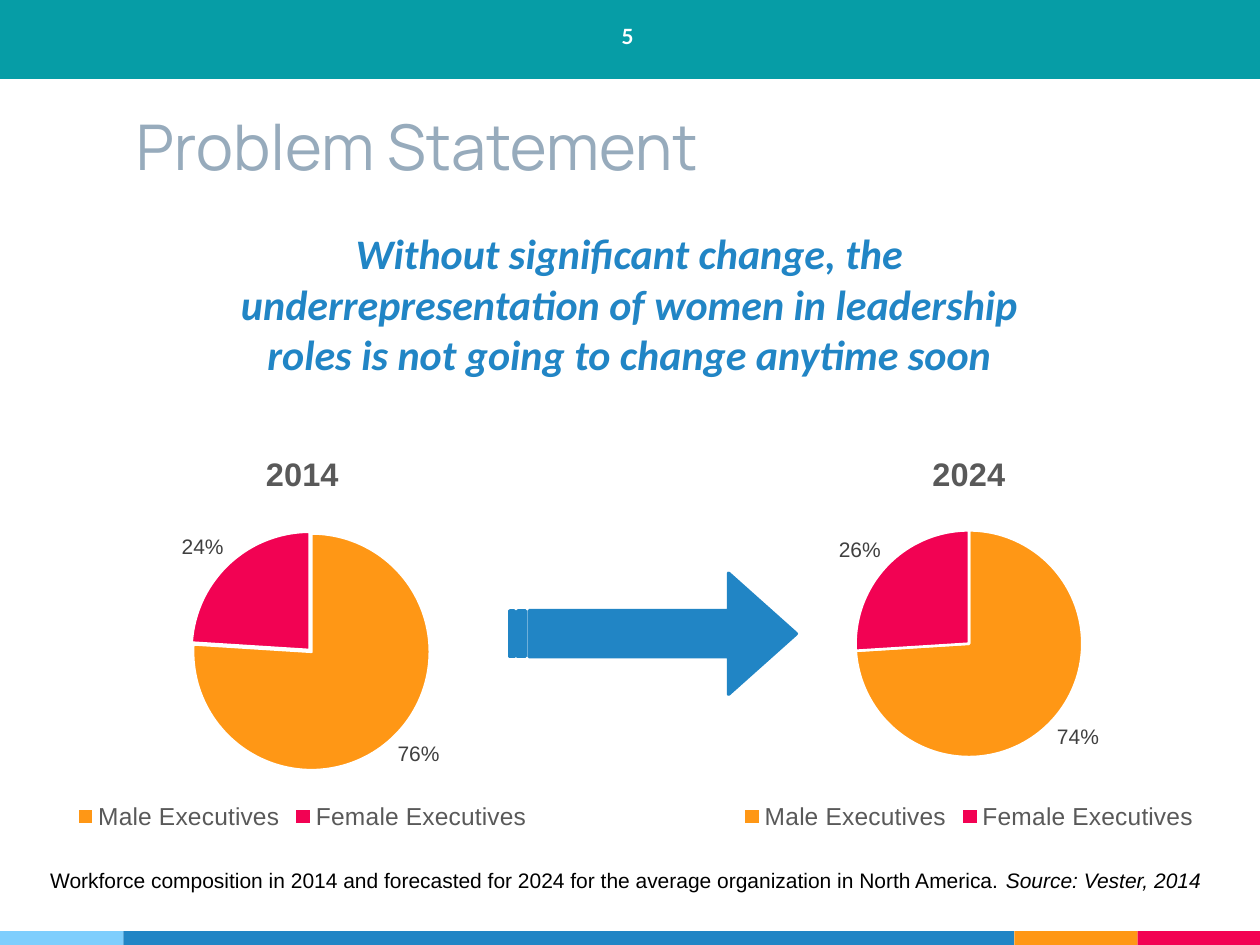
"""Build the problem statement slide with two pie charts."""
from lxml.etree import SubElement as Sub
from pptx import Presentation
from pptx.chart.data import CategoryChartData as Data
from pptx.dml.color import RGBColor
from pptx.enum.chart import XL_CHART_TYPE as Kind, XL_LABEL_POSITION as Spot, XL_LEGEND_POSITION as Side
from pptx.enum.shapes import MSO_SHAPE as Form
from pptx.enum.text import MSO_ANCHOR as Anchor, PP_ALIGN as Align
from pptx.oxml.ns import qn
from pptx.util import Inches, Pt

TEAL = RGBColor(0x06, 0x9D, 0xA6)
BLUE = RGBColor(0x21, 0x85, 0xC5)
SKY = RGBColor(0x7E, 0xCE, 0xFD)
ORANGE = RGBColor(0xFF, 0x97, 0x15)
PINK = RGBColor(0xF2, 0x02, 0x53)
SLATE = RGBColor(0x97, 0xAB, 0xBC)
GRAY = RGBColor(0x59, 0x59, 0x59)
DARK = RGBColor(0x40, 0x40, 0x40)
BLACK = RGBColor(0, 0, 0)
WHITE = RGBColor(0xFF, 0xFF, 0xFF)


class Deck:
    """Hold the slide and its chart style."""

    font = "Arial"
    groups = ("Male Executives", "Female Executives")
    hues = (ORANGE, PINK)

    def __init__(self, prs):
        """Add a blank slide."""
        self.slide = prs.slides.add_slide(prs.slide_layouts[6])

    def style(self, font, size, color, name=None, bold=False, italic=False):
        """Set the look of a font."""
        font.name = name or self.font
        font.size = Pt(size)
        font.color.rgb = color
        font.bold = bold
        font.italic = italic

    def shape(self, form, box, color, line=0):
        """Add a filled shape."""
        item = self.slide.shapes.add_shape(form, *map(Inches, box))
        item.shadow.inherit = False
        item.fill.solid()
        item.fill.fore_color.rgb = color
        if line:
            item.line.color.rgb = color
            item.line.width = Pt(line)
        else:
            item.line.fill.background()
        return item

    def text(self, box, words, size, color, name=None, bold=False, italic=False, align=Align.LEFT):
        """Add a wrapped text box."""
        frame = self.slide.shapes.add_textbox(*map(Inches, box)).text_frame
        frame.word_wrap = True
        frame.text = words
        par = frame.paragraphs[0]
        par.alignment = align
        self.style(par.runs[0].font, size, color, name, bold, italic)
        return frame

    def pie(self, box, title, vals, plot, burst=0):
        """Add a pie chart with a fixed plot area."""
        data = Data(number_format="0%")
        data.categories = self.groups
        data.add_series("Series 1", vals)
        chart = self.slide.shapes.add_chart(Kind.PIE, *map(Inches, box), data).chart
        self.style(chart.font, 10, BLACK)
        chart.has_title = True
        head = chart.chart_title.text_frame
        head.text = title
        self.style(head.paragraphs[0].runs[0].font, 18.6, GRAY, bold=True)
        chart.has_legend = True
        chart.legend.position = Side.BOTTOM
        chart.legend.include_in_layout = False
        self.style(chart.legend.font, 14, GRAY)
        pie = chart.plots[0]
        pie.vary_by_categories = True
        pie.has_data_labels = True
        tags = pie.data_labels
        tags.show_value = True
        tags.show_percentage = False
        tags.number_format = "0%"
        tags.number_format_is_linked = False
        tags.position = Spot.OUTSIDE_END
        self.style(tags.font, 12, DARK)
        for i, hue in enumerate(self.hues):
            look = pie.series[0].points[i].format
            look.fill.solid()
            look.fill.fore_color.rgb = hue
            look.line.color.rgb = WHITE
            look.line.width = Pt(1.5)
        if burst:
            point = pie.series[0]._element.findall(qn("c:dPt"))[1]
            mark = point.makeelement(qn("c:explosion"), {"val": str(burst)})
            point.find(qn("c:spPr")).addprevious(mark)
        self.place(chart, plot)

    def place(self, chart, plot):
        """Fix the inner plot area as fractions of the chart."""
        area = chart._chartSpace.chart.plotArea
        for old in area.findall(qn("c:layout")):
            area.remove(old)
        lay = area.makeelement(qn("c:layout"), {})
        area.insert(0, lay)
        man = Sub(lay, qn("c:manualLayout"))
        rules = [("layoutTarget", "inner"), ("xMode", "edge"), ("yMode", "edge")]
        for tag, val in rules + list(zip("xywh", plot)):
            Sub(man, qn("c:" + tag), val=str(val))


def main():
    """Draw and save the slide."""
    prs = Presentation()
    prs.slide_width, prs.slide_height = Inches(10), Inches(7.5)
    deck = Deck(prs)

    left = 0
    for wide, hue in ((0.98, SKY), (7.07, BLUE), (0.98, ORANGE), (0.97, PINK)):
        deck.shape(Form.RECTANGLE, (left, 7.39, wide, 0.11), hue)
        left += wide

    title = deck.text((0.98, 0.3, 8.36, 1.25), "Problem Statement", 36, SLATE, "Manrope")
    title.vertical_anchor = Anchor.BOTTOM
    title.margin_left = title.margin_right = Inches(0.1)
    title.margin_top = title.margin_bottom = Inches(0.1)

    deck.pie((-0.01, 3.43, 4.82, 3.2), "2014", (0.76, 0.24), (0.32, 0.25, 0.39, 0.59), 2)
    deck.pie((5.19, 3.43, 5, 3.2), "2024", (0.74, 0.26), (0.32, 0.24, 0.36, 0.57))

    arrow = deck.shape(Form.STRIPED_RIGHT_ARROW, (4.05, 4.55, 2.27, 0.96), BLUE, 2)
    arrow.adjustments[0], arrow.adjustments[1] = 0.38, 0.56

    deck.text((1.81, 1.76, 6.37, 1.31),
              "Without significant change, the underrepresentation of women in leadership "
              "roles is not going to change anytime soon",
              24, BLUE, "Calibri", True, True, Align.CENTER)
    note = deck.text((0.3, 6.84, 9.4, 0.3),
                     "Workforce composition in 2014 and forecasted for 2024 for the average "
                     "organization in North America. ", 12, BLACK)
    credit = note.paragraphs[0].add_run()
    credit.text = "Source: Vester, 2014"
    deck.style(credit.font, 12, BLACK, italic=True)

    deck.shape(Form.RECTANGLE, (0, 0, 10, 0.62), TEAL, 0.75)
    deck.text((4.45, 0.14, 1.06, 0.3), "5", 12, WHITE, "Lato", True, align=Align.CENTER)
    prs.save("out.pptx")


if __name__ == "__main__":
    main()
